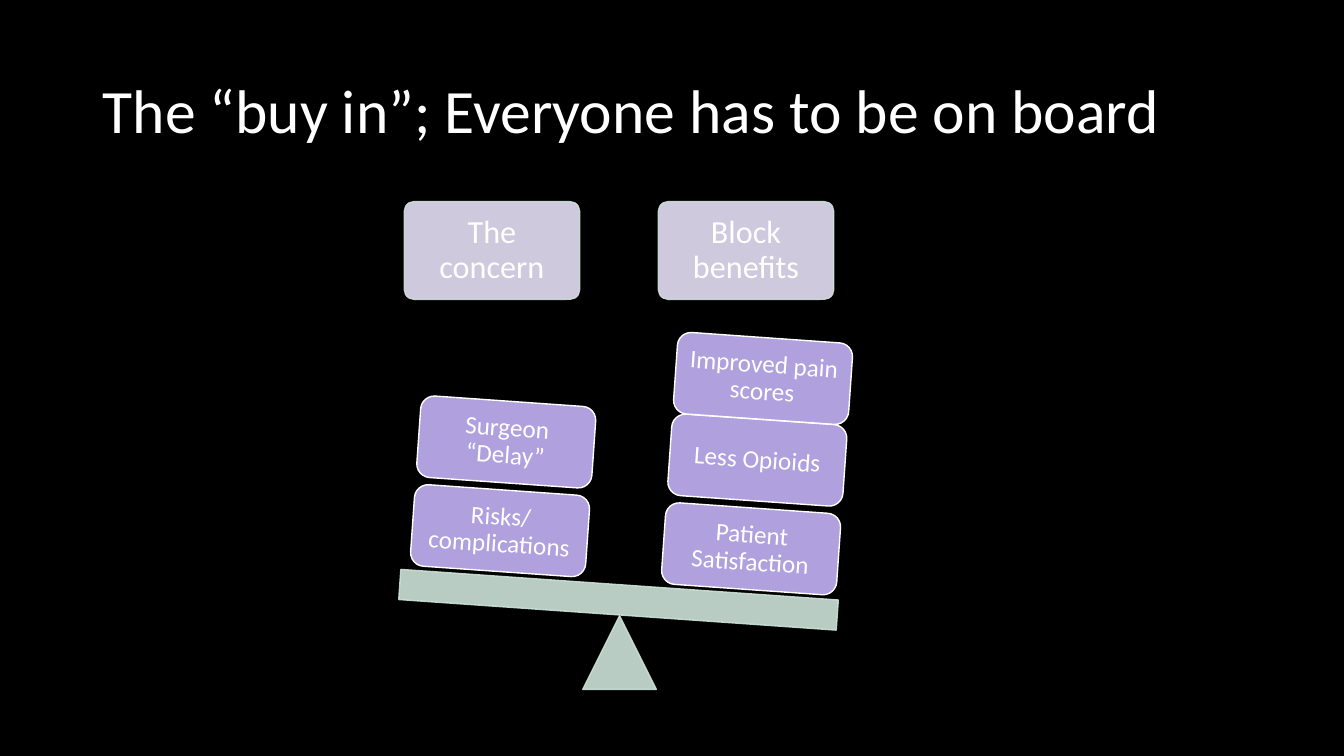
import math

import lxml.etree
import pptx
import pptx.dml.color
import pptx.enum.shapes
import pptx.enum.text
import pptx.oxml.ns
import pptx.util

Inches = pptx.util.Inches
Pt = pptx.util.Pt
RGBColor = pptx.dml.color.RGBColor
Shape = pptx.enum.shapes.MSO_SHAPE
Align = pptx.enum.text.PP_ALIGN

BLACK = RGBColor(0x00, 0x00, 0x00)
WHITE = RGBColor(0xFF, 0xFF, 0xFF)
LILAC = RGBColor(0xE5, 0xDF, 0xF4)
PURPLE = RGBColor(0xB0, 0xA0, 0xDD)
MINT = RGBColor(0xCD, 0xE3, 0xDA)

FONT = "Calibri"
TILT = 4  # degrees, down to the right
BLOCK_WIDTH, BLOCK_HEIGHT = 1.74, 0.81
BLOCK_RISES = (0, 0.88, 1.69)


def write_text(shape, text, size, align, inset):
    frame = shape.text_frame
    frame.word_wrap = True
    frame.auto_size = pptx.enum.text.MSO_AUTO_SIZE.NONE
    frame.vertical_anchor = pptx.enum.text.MSO_ANCHOR.MIDDLE
    frame.margin_left = frame.margin_right = Inches(inset)
    frame.margin_top = frame.margin_bottom = Inches(inset)
    para = frame.paragraphs[0]
    para.text = text
    para.alignment = align
    para.line_spacing = 0.9
    para.font.name = FONT
    para.font.size = Pt(size)
    para.font.color.rgb = WHITE


def set_opacity(shape, percent):
    """Make the fill and the line of a shape partly transparent."""
    for color in shape.fill._xPr.iter(pptx.oxml.ns.qn("a:srgbClr")):
        alpha = lxml.etree.SubElement(color, pptx.oxml.ns.qn("a:alpha"))
        alpha.set("val", str(percent * 1000))


def add_part(group, kind, box, fill, line, tilt=0):
    shape = group.shapes.add_shape(kind, *map(Inches, box))
    shape.shadow.inherit = False
    shape.fill.solid()
    shape.fill.fore_color.rgb = fill
    shape.line.color.rgb = line
    shape.line.width = Pt(1)
    shape.rotation = tilt
    return shape


def add_title(page, box, text):
    title = page.shapes.title
    title.left, title.top, title.width, title.height = map(Inches, box)
    write_text(title, text, 44, Align.LEFT, 0.1)


def add_heading(group, box, text):
    heading = add_part(group, Shape.ROUNDED_RECTANGLE, box, LILAC, MINT)
    heading.adjustments[0] = 0.1
    set_opacity(heading, 90)
    write_text(heading, text, 23, Align.CENTER, 0.1)


def add_stack(group, left, top, labels):
    """Stack tilted blocks upwards from the lowest one."""
    for label, rise in zip(labels, BLOCK_RISES):
        lean = rise * math.tan(math.radians(TILT))
        box = (left + lean, top - rise, BLOCK_WIDTH, BLOCK_HEIGHT)
        block = add_part(group, Shape.ROUNDED_RECTANGLE, box, PURPLE, WHITE, TILT)
        write_text(block, label, 18, Align.CENTER, 0.07)


def add_balance(page, left, top):
    group = page.shapes.add_group_shape()

    # Headings of the two sides
    for column, text in enumerate(("The concern", "Block benefits")):
        add_heading(group, (left + 0.05 + 2.52 * column, top, 1.74, 0.97), text)

    # Pivot and beam
    pivot = add_part(group, Shape.ISOSCELES_TRIANGLE,
                     (left + 1.82, top + 4.11, 0.73, 0.73), MINT, MINT)
    beam = add_part(group, Shape.RECTANGLE,
                    (left, top + 3.8, 4.35, 0.3), MINT, MINT, TILT)
    for part in (pivot, beam):
        set_opacity(part, 90)

    # Weights on each side
    add_stack(group, left + 2.62, top + 3.04,
              ("Patient Satisfaction", "Less Opioids", "Improved pain scores"))
    add_stack(group, left + 0.13, top + 2.86,
              ("Risks/ complications", "Surgeon “Delay”"))


def main():
    deck = pptx.Presentation()
    deck.slide_width, deck.slide_height = Inches(13.33), Inches(7.5)
    page = deck.slides.add_slide(deck.slide_layouts[5])
    page.background.fill.solid()
    page.background.fill.fore_color.rgb = BLACK
    add_title(page, (0.92, 0.4, 11.5, 1.45),
              "The “buy in”; Everyone has to be on board")
    add_balance(page, 3.96, 2)
    deck.save("out.pptx")


if __name__ == "__main__":
    main()
